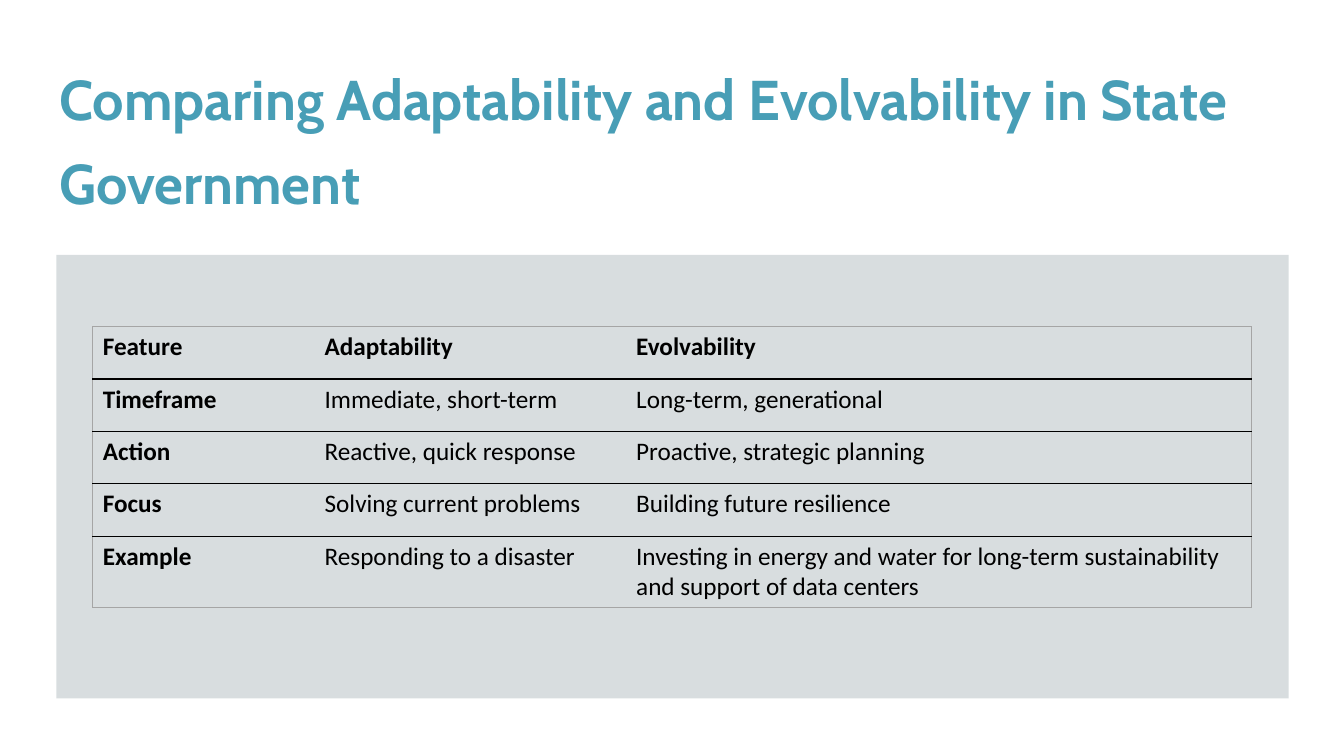
from lxml.etree import SubElement
from pptx import Presentation
from pptx.dml.color import RGBColor
from pptx.enum.shapes import MSO_SHAPE
from pptx.enum.text import MSO_ANCHOR, MSO_AUTO_SIZE, PP_ALIGN
from pptx.oxml.ns import qn
from pptx.util import Inches, Pt

TITLE = "Comparing Adaptability and Evolvability in State Government"
COMPARISON = [
    ("Feature", "Adaptability", "Evolvability"),
    ("Timeframe", "Immediate, short-term", "Long-term, generational"),
    ("Action", "Reactive, quick response", "Proactive, strategic planning"),
    ("Focus", "Solving current problems", "Building future resilience"),
    ("Example", "Responding to a disaster",
     "Investing in energy and water for long-term sustainability and support of data centers"),
]
COLORS = {"title": "489EB6", "panel": "3D5563", "text": "000000",
          "rule": "000000", "frame": "A5A5A5"}
WIDTH, HEIGHT = 13.33, 7.5
TITLE_BOX = (0.49, 0.47, WIDTH - 0.49, 0.83)
PANEL_BOX = (0.56, 2.53, 12.22, 4.4)
PANEL_OPACITY = 20
COLUMNS = (2.2, 3.09, 6.2)
ROW_HEIGHT = 0.52
TABLE_LEFT, TABLE_TOP = 0.92, 3.24
TITLE_FONT = {"name": "Cabin", "size": Pt(40), "bold": True}
CELL_FONT = {"name": "Calibri", "size": Pt(18)}
TITLE_FRAME = {"margin_left": Inches(0.1), "margin_right": Inches(0.1),
               "margin_top": 0, "margin_bottom": 0, "word_wrap": True,
               "auto_size": MSO_AUTO_SIZE.NONE, "vertical_anchor": MSO_ANCHOR.TOP}


def apply(target, values):
    for key, value in values.items():
        setattr(target, key, value)


def style_font(font, values, color):
    apply(font, values)
    font.color.rgb = RGBColor.from_string(COLORS[color])


def set_borders(cell, borders):
    properties = cell._tc.get_or_add_tcPr()
    for side, color in borders.items():
        line = SubElement(properties, qn(f"a:ln{side}"), w=str(Pt(1)))
        if color:
            fill = SubElement(line, qn("a:solidFill"))
            SubElement(fill, qn("a:srgbClr"), val=COLORS[color])
        else:
            SubElement(line, qn("a:noFill"))


def add_title(slide):
    title = slide.shapes.title
    title.left, title.top, title.width, title.height = map(Inches, TITLE_BOX)
    apply(title.text_frame, TITLE_FRAME)
    title.text_frame.text = TITLE
    line = title.text_frame.paragraphs[0]
    apply(line, {"alignment": PP_ALIGN.LEFT, "line_spacing": 1.25})
    style_font(line.runs[0].font, TITLE_FONT, "title")


def add_panel(slide):
    panel = slide.shapes.add_shape(MSO_SHAPE.RECTANGLE, *map(Inches, PANEL_BOX))
    panel.shadow.inherit = False
    panel.line.fill.background()
    panel.fill.solid()
    panel.fill.fore_color.rgb = RGBColor.from_string(COLORS["panel"])
    tint = panel._element.spPr.find(qn("a:solidFill"))[0]
    SubElement(tint, qn("a:alpha"), val=str(PANEL_OPACITY * 1000))


def add_comparison(slide):
    last_row, last_column = len(COMPARISON) - 1, len(COLUMNS) - 1
    box = (TABLE_LEFT, TABLE_TOP, sum(COLUMNS), ROW_HEIGHT * len(COMPARISON))
    table = slide.shapes.add_table(
        len(COMPARISON), len(COLUMNS), *map(Inches, box)).table
    apply(table, {"first_row": False, "horz_banding": False})
    for column, width in zip(table.columns, COLUMNS):
        column.width = Inches(width)
    for r, features in enumerate(COMPARISON):
        table.rows[r].height = Inches(ROW_HEIGHT)
        for c, words in enumerate(features):
            cell = table.cell(r, c)
            cell.text = words
            font = cell.text_frame.paragraphs[0].runs[0].font
            style_font(font, CELL_FONT, "text")
            font.bold = r == 0 or c == 0
            set_borders(cell, {
                "L": "frame" if c == 0 else None,
                "R": "frame" if c == last_column else None,
                "T": "frame" if r == 0 else "rule",
                "B": "frame" if r == last_row else "rule",
            })
            cell.fill.background()


def main():
    deck = Presentation()
    deck.slide_width, deck.slide_height = Inches(WIDTH), Inches(HEIGHT)
    slide = deck.slides.add_slide(deck.slide_layouts[5])
    add_title(slide)
    add_panel(slide)
    add_comparison(slide)
    deck.save("out.pptx")


if __name__ == "__main__":
    main()
